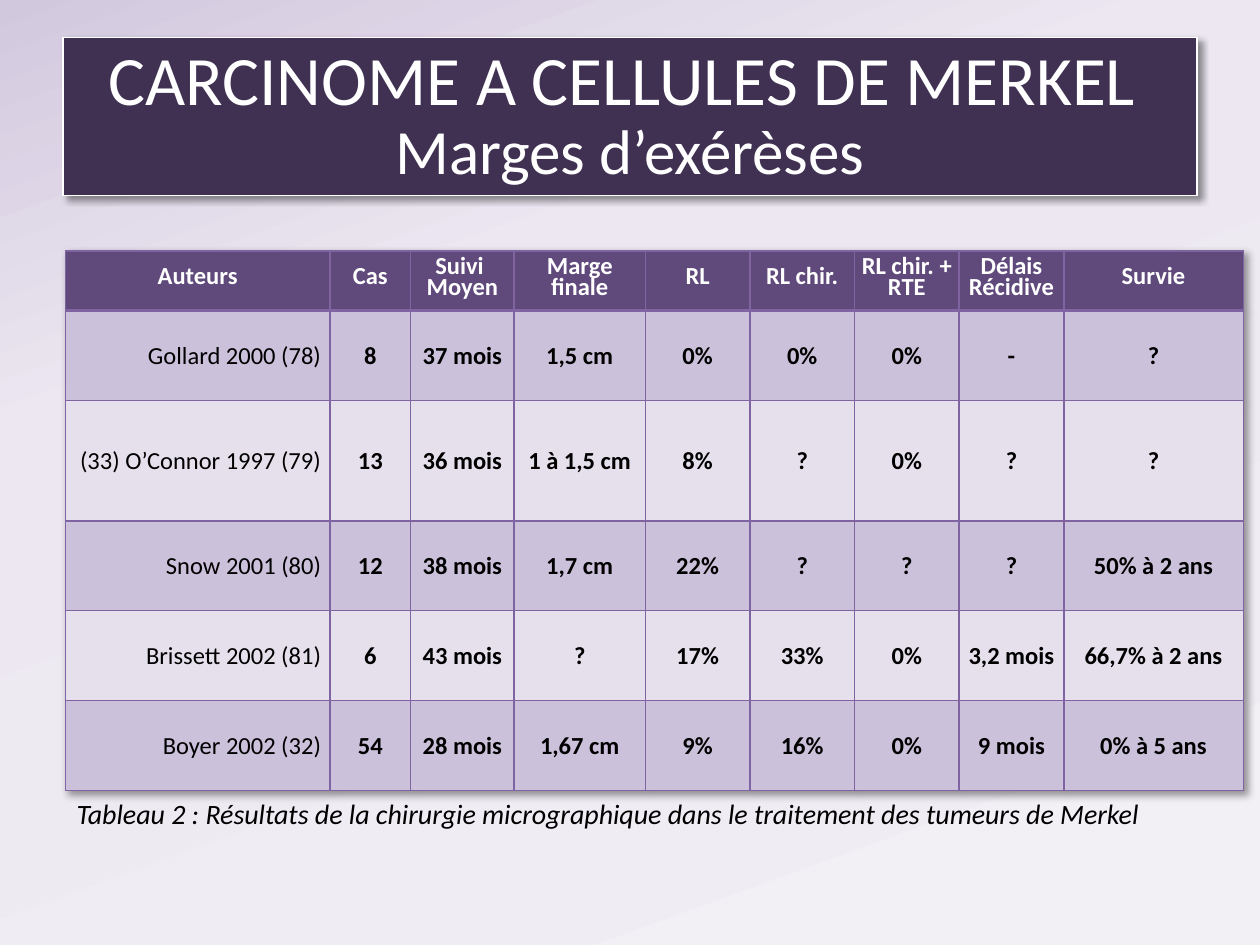
from lxml.etree import SubElement
from pptx import Presentation
from pptx.dml.color import RGBColor
from pptx.enum.shapes import MSO_SHAPE
from pptx.enum.text import MSO_ANCHOR as Anchor, PP_ALIGN as Align
from pptx.oxml import parse_xml
from pptx.oxml.ns import nsdecls, qn
from pptx.util import Pt

TITLE = [("CARCINOME A CELLULES DE MERKEL ", 39.6), ("Marges d’exérèses", 36)]
CAPTION = ("Tableau 2\u00a0: Résultats de la chirurgie micrographique "
           "dans le traitement des tumeurs de Merkel")
HEADER = ["Auteurs", "Cas", "Suivi \nMoyen", "Marge finale", "RL", "RL chir.",
          "RL chir. + RTE", "Délais Récidive", "Survie"]
STUDIES = [
    ["Gollard 2000 (78)", "8", "37 mois", "1,5 cm", "0%", "0%", "0%", "-", "?"],
    ["(33) O’Connor 1997 (79)", "13", "36 mois", "1 à 1,5 cm", "8%", "?", "0%", "?", "?"],
    ["Snow 2001 (80)", "12", "38 mois", "1,7 cm", "22%", "?", "?", "?", "50% à 2 ans"],
    ["Brissett 2002 (81)", "6", "43 mois", "?", "17%", "33%", "0%", "3,2 mois",
     "66,7% à 2 ans"],
    ["Boyer 2002 (32)", "54", "28 mois", "1,67 cm", "9%", "16%", "0%", "9 mois",
     "0% à 5 ans"],
]
COL_WIDTHS = [151.2, 46.1, 59.2, 74.9] + [59.8] * 4 + [102.6]
ROW_HEIGHTS = [34.3, 51.4, 68.6, 51.4, 51.4, 51.4]
BACKDROP = [(0, "D2C8DE"), (31, "ECE7F1"), (100, "F2EFF5")]
HEADER_FILL, BANDS, BORDER = "604A7B", ["CCC1DA", "E6E0EC"], "8064A2"


def rgb(value):
    return RGBColor.from_string(value)


def add_run(p, text, size, color="000000", bold=False, italic=False):
    r = p.add_run()
    r.text = text
    r.font.name, r.font.size = "Calibri", Pt(size)
    r.font.bold, r.font.italic = bold, italic
    r.font.color.rgb = rgb(color)


def write(tf, text, align=Align.LEFT, spacing=None, after=None, **font):
    for i, line in enumerate(text.split("\n")):
        p = tf.add_paragraph() if i else tf.paragraphs[0]
        p.alignment, p.line_spacing, p.space_after = align, spacing, after
        add_run(p, line, **font)


def shadow():
    return parse_xml(
        f'<a:effectLst {nsdecls("a")}><a:outerShdw blurRad="{Pt(4)}" dist="{Pt(3)}" '
        'dir="2700000" algn="tl" rotWithShape="0"><a:srgbClr val="000000">'
        '<a:alpha val="40000"/></a:srgbClr></a:outerShdw></a:effectLst>')


def add_rect(s, left, top, width, height):
    sp = s.shapes.add_shape(MSO_SHAPE.RECTANGLE, Pt(left), Pt(top), Pt(width), Pt(height))
    sp.shadow.inherit = False
    return sp


def add_backdrop(s):
    sp = add_rect(s, 0, 0, 720, 540)
    sp.line.fill.background()
    sp.fill.gradient()
    grad = sp.fill._xPr.find(qn("a:gradFill"))
    stops = grad.find(qn("a:gsLst"))
    stops.clear()
    for pos, color in BACKDROP:
        stop = SubElement(stops, qn("a:gs"), pos=str(pos * 1000))
        SubElement(stop, qn("a:srgbClr"), val=color)
    grad.find(qn("a:lin")).set("ang", str(70 * 60000))


def add_title(s):
    sp = add_rect(s, 36, 21.6, 648, 90)
    sp.fill.solid()
    sp.fill.fore_color.rgb = rgb("403152")
    sp.line.color.rgb, sp.line.width = rgb("FFFFFF"), Pt(0.75)
    props = sp._element.spPr
    props.replace(props.find(qn("a:effectLst")), shadow())
    tf = sp.text_frame
    tf.word_wrap, tf.vertical_anchor = True, Anchor.MIDDLE
    p = tf.paragraphs[0]
    p.alignment, p.line_spacing = Align.CENTER, 0.9
    for i, (text, size) in enumerate(TITLE):
        if i:
            p.add_line_break()
        add_run(p, text, size, "FFFFFF")


def style_cell(cell, fill, inset, top, bottom):
    cell.vertical_anchor = Anchor.MIDDLE
    cell.margin_left = cell.margin_right = Pt(inset)
    cell.margin_top = cell.margin_bottom = 0
    props = cell._tc.get_or_add_tcPr()
    for side, width in (("L", 1), ("R", 1), ("T", top), ("B", bottom)):
        ln = SubElement(props, qn(f"a:ln{side}"), w=str(Pt(width)))
        SubElement(SubElement(ln, qn("a:solidFill")), qn("a:srgbClr"), val=BORDER)
    cell.fill.solid()
    cell.fill.fore_color.rgb = rgb(fill)


def add_results(s):
    rows = [HEADER] + STUDIES
    table = s.shapes.add_table(len(rows), len(HEADER), Pt(37.4), Pt(143.3),
                               Pt(sum(COL_WIDTHS)), Pt(sum(ROW_HEIGHTS))).table
    table._tbl.tblPr.insert(0, shadow())
    for column, width in zip(table.columns, COL_WIDTHS):
        column.width = Pt(width)
    for i, (row, height) in enumerate(zip(rows, ROW_HEIGHTS)):
        table.rows[i].height = Pt(height)
        for j, text in enumerate(row):
            cell = table.cell(i, j)
            if i == 0:
                style_cell(cell, HEADER_FILL, 2.9, 1, 2.25)
                write(cell.text_frame, text, Align.CENTER, Pt(12),
                      size=14, color="FFFFFF", bold=True)
            else:
                style_cell(cell, BANDS[(i - 1) % 2], 5, 2.25 if i == 1 else 1, 1)
                write(cell.text_frame, text, Align.CENTER if j else Align.RIGHT,
                      after=Pt(10), size=14, bold=j > 0)


def add_caption(s):
    tf = s.shapes.add_textbox(Pt(36.7), Pt(451.6), Pt(680.4), Pt(26.6)).text_frame
    tf.word_wrap, tf.vertical_anchor = True, Anchor.MIDDLE
    write(tf, CAPTION, size=16, italic=True)


def main():
    """Build the slide on margins for Merkel cell carcinoma."""
    prs = Presentation()
    prs.slide_width, prs.slide_height = Pt(720), Pt(540)
    s = prs.slides.add_slide(prs.slide_layouts[6])
    add_backdrop(s)
    add_results(s)
    add_caption(s)
    add_title(s)
    prs.save("out.pptx")


if __name__ == "__main__":
    main()
